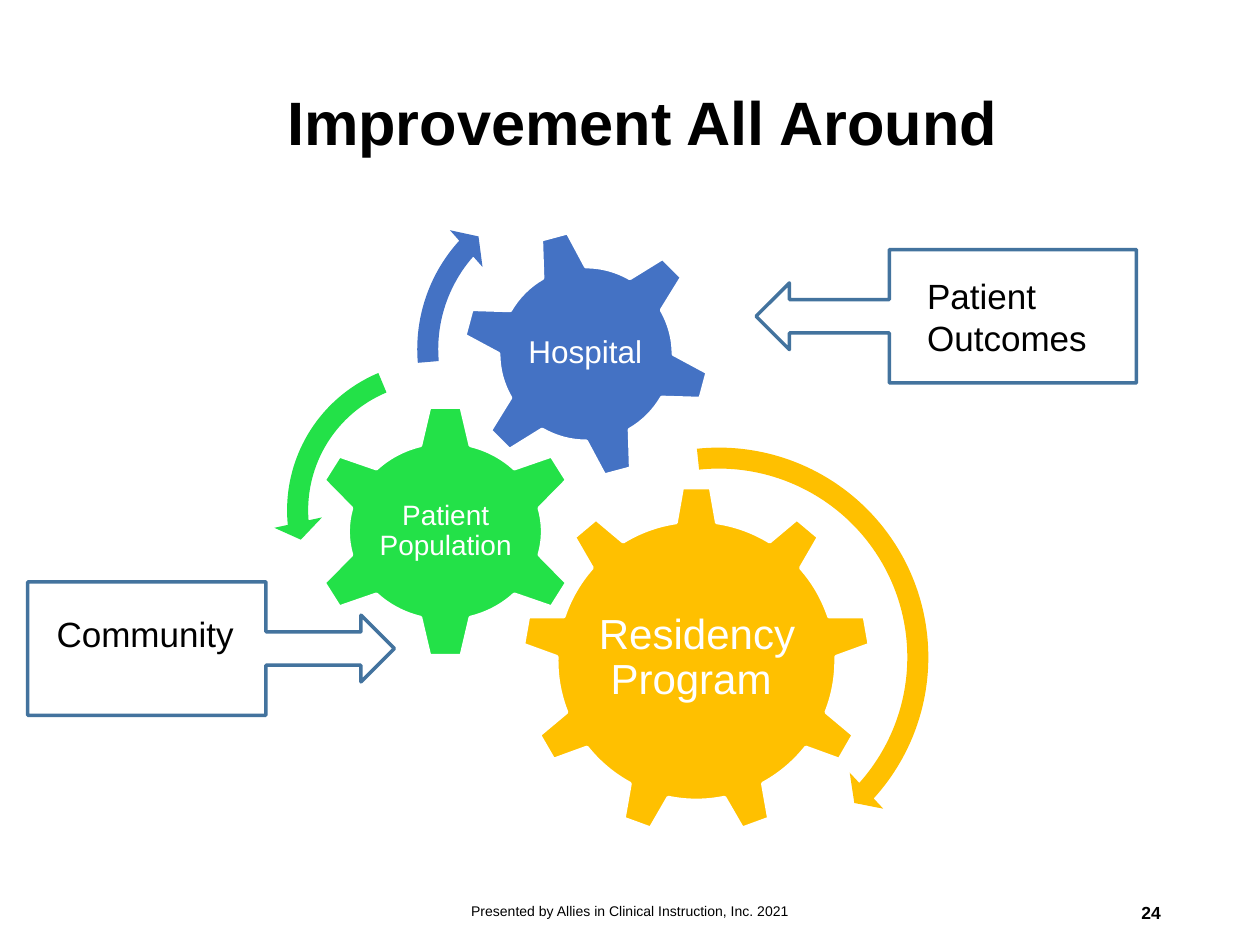
"""Build the "Improvement All Around" slide of turning gears and callouts."""
from dataclasses import dataclass
from typing import Optional

import pptx
import pptx.dml.color
import pptx.enum.shapes
import pptx.enum.text
import pptx.util

Cm = pptx.util.Cm
Kind = pptx.enum.shapes.MSO_SHAPE
Align = pptx.enum.text.PP_ALIGN
Anchor = pptx.enum.text.MSO_ANCHOR
AutoSize = pptx.enum.text.MSO_AUTO_SIZE


@dataclass(frozen=True)
class Theme:
    font: str = "Arial"
    ink: str = "000000"
    paper: str = "FFFFFF"
    gold: str = "FFC000"
    green: str = "23E148"
    blue: str = "4472C4"
    outline: str = "43739E"
    line_width: float = 2
    title: float = 35
    residency: float = 24
    population: float = 16
    hospital: float = 18
    callout: float = 20
    number: float = 10
    footer: float = 8


THEME = Theme()


@dataclass(frozen=True)
class Box:
    left: float
    top: float
    width: float
    height: float

    def lengths(self) -> tuple:
        return Cm(self.left), Cm(self.top), Cm(self.width), Cm(self.height)


@dataclass(frozen=True)
class Label:
    text: str
    box: Box
    size: float
    color: str = THEME.ink
    bold: bool = False
    align: Align = Align.LEFT
    anchor: Anchor = Anchor.MIDDLE
    inset: tuple = (0.25, 0.13)
    spacing: float = 1.0
    grow: bool = False


@dataclass(frozen=True)
class Gear:
    kind: Kind
    box: Box
    color: str
    text: str
    text_box: Box
    size: float
    inset: float = 0.08
    rotation: float = 0


@dataclass(frozen=True)
class TurnArrow:
    kind: Kind
    box: Box
    color: str
    band_percent: float
    head_sweep: float
    tip_angle: float
    tail_angle: float
    head_percent: float


@dataclass(frozen=True)
class Callout:
    box: Box
    text: str
    text_box: Box
    rotation: float = 0


GEARS = [
    Gear(Kind.GEAR_9, Box(10.52, 9.8, 7.04, 7.04), THEME.gold, "Residency Program ",
         Box(11.94, 11.46, 4.22, 3.63), THEME.residency),
    Gear(Kind.GEAR_6, Box(6.25, 8.15, 5.46, 5.13), THEME.green, "Patient Population",
         Box(7.59, 9.45, 2.79, 2.54), THEME.population, inset=0.05),
    Gear(Kind.GEAR_6, Box(9.3, 4.62, 5.03, 5.03), THEME.blue, "Hospital",
         Box(10.39, 5.72, 2.82, 2.82), THEME.hospital, rotation=345),
]
TURN_ARROWS = [
    TurnArrow(Kind.CIRCULAR_ARROW, Box(9.98, 8.74, 9.02, 9.02), THEME.gold,
              4.7, 4.98, 42.09, 264.03, 5.5),
    TurnArrow(Kind.LEFT_CIRCULAR_ARROW, Box(5.51, 7.01, 6.55, 6.55), THEME.green,
              6.5, 7.17, 174.82, 247.3, 7.5),
    TurnArrow(Kind.CIRCULAR_ARROW, Box(8.13, 3.51, 7.06, 7.06), THEME.blue,
              6, 6.57, 221.9, 175.14, 7),
]
CALLOUTS = [
    Callout(Box(0.56, 11.73, 7.39, 2.69), "Community", Box(0.89, 12.22, 4.29, 1.12)),
    Callout(Box(15.24, 5.03, 7.67, 2.69), "Patient Outcomes",
            Box(18.44, 5.41, 4.47, 1.96), rotation=180),
]
PAGE_LABELS = [
    Label("Improvement All Around", Box(5.54, 0.69, 18.14, 3.68), THEME.title,
          bold=True, inset=(0.25, 0.25), spacing=0.9),
    Label("24", Box(17.93, 17.88, 5.72, 1.02), THEME.number, bold=True, align=Align.RIGHT),
    Label("Presented by Allies in Clinical Instruction, Inc. 2021",
          Box(8.41, 17.86, 8.59, 1.02), THEME.footer, align=Align.CENTER),
]


def rgb(color: str) -> pptx.dml.color.RGBColor:
    """Turn a hex string into a colour."""
    return pptx.dml.color.RGBColor.from_string(color)


def draw_label(shapes, label: Label) -> None:
    """Add one text box."""
    frame = shapes.add_textbox(*label.box.lengths()).text_frame
    frame.word_wrap = True
    frame.auto_size = AutoSize.SHAPE_TO_FIT_TEXT if label.grow else AutoSize.NONE
    frame.vertical_anchor = label.anchor
    frame.margin_left = frame.margin_right = Cm(label.inset[0])
    frame.margin_top = frame.margin_bottom = Cm(label.inset[1])
    paragraph = frame.paragraphs[0]
    paragraph.alignment = label.align
    paragraph.line_spacing = label.spacing
    run = paragraph.add_run()
    run.text = label.text
    run.font.name = THEME.font
    run.font.size = pptx.util.Pt(label.size)
    run.font.bold = label.bold
    run.font.color.rgb = rgb(label.color)


def draw_shape(shapes, kind: Kind, box: Box, fill: Optional[str] = None,
               line: Optional[str] = None, rotation: float = 0):
    """Add a flat preset shape with an optional fill and outline."""
    shape = shapes.add_shape(kind, *box.lengths())
    shape.shadow.inherit = False
    shape.rotation = rotation
    if fill:
        shape.fill.solid()
        shape.fill.fore_color.rgb = rgb(fill)
    else:
        shape.fill.background()
    if line:
        shape.line.color.rgb = rgb(line)
        shape.line.width = pptx.util.Pt(THEME.line_width)
    else:
        shape.line.fill.background()
    return shape


def draw_gear(shapes, gear: Gear) -> None:
    """Add a gear and its upright label."""
    draw_shape(shapes, gear.kind, gear.box, gear.color, THEME.paper, gear.rotation)
    draw_label(shapes, Label(gear.text, gear.text_box, gear.size, THEME.paper,
                             align=Align.CENTER, inset=(gear.inset, gear.inset), spacing=0.9))


def draw_turn_arrow(shapes, arrow: TurnArrow) -> None:
    """Add a curved arrow, turning percents and degrees into adjustments."""
    shape = draw_shape(shapes, arrow.kind, arrow.box, arrow.color)
    angles = (arrow.head_sweep, arrow.tip_angle, arrow.tail_angle)
    values = [arrow.band_percent / 100, *(angle * 0.6 for angle in angles),
              arrow.head_percent / 100]
    for index, value in enumerate(values):
        shape.adjustments[index] = value


def draw_callout(shapes, callout: Callout) -> None:
    """Add an outlined arrow callout and its label."""
    draw_shape(shapes, Kind.RIGHT_ARROW_CALLOUT, callout.box, line=THEME.outline,
               rotation=callout.rotation)
    draw_label(shapes, Label(callout.text, callout.text_box, THEME.callout,
                             anchor=Anchor.TOP, grow=True))


def main() -> None:
    """Build and save the slide."""
    deck = pptx.Presentation()
    deck.slide_width, deck.slide_height = Cm(25.4), Cm(19.05)
    slide = deck.slides.add_slide(deck.slide_layouts[6])
    gear_train = slide.shapes.add_group_shape().shapes
    for gear in GEARS:
        draw_gear(gear_train, gear)
    for arrow in TURN_ARROWS:
        draw_turn_arrow(gear_train, arrow)
    for callout in CALLOUTS:
        draw_callout(slide.shapes.add_group_shape().shapes, callout)
    for label in PAGE_LABELS:
        draw_label(slide.shapes, label)
    deck.save("out.pptx")


if __name__ == "__main__":
    main()
